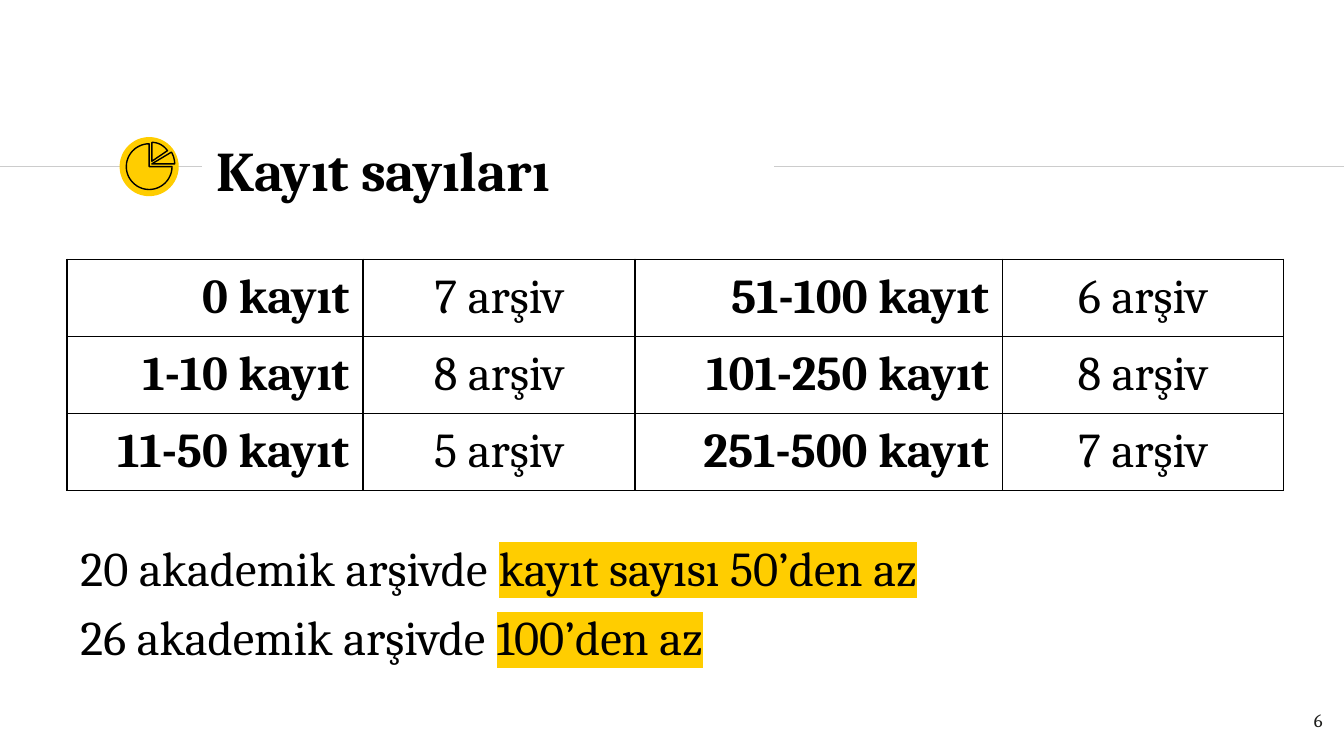
import math

import lxml.etree
import pptx
import pptx.dml.color
import pptx.enum.shapes
import pptx.enum.text
import pptx.oxml.ns
import pptx.util

Inches = pptx.util.Inches
Pt = pptx.util.Pt
qn = pptx.oxml.ns.qn
ALIGN = pptx.enum.text.PP_ALIGN
ANCHOR = pptx.enum.text.MSO_ANCHOR

THEME = {
    "font": "Cambria",
    "ink": "000000",
    "number_ink": "1D1D1B",
    "rule": "CCCCCC",
    "accent": "FFCD00",
    "title": 30,
    "body": 26,
    "number": 10,
    "thin": 0.75,
    "border": 1,
}


def rgb(color):
    return pptx.dml.color.RGBColor.from_string(color)


def apply(obj, formats):
    for name, value in formats.items():
        setattr(obj, name, value)


class Deck:
    def __init__(self, theme, slide):
        self.theme = theme
        self.slide = slide

    def run(self, p, text, size="body", color="ink", bold=False, marked=False):
        r = p.add_run()
        r.text = text
        apply(r.font, {"name": self.theme["font"], "size": Pt(self.theme[size]), "bold": bold})
        r.font.color.rgb = rgb(self.theme[color])
        if marked:
            highlight = lxml.etree.Element(qn("a:highlight"))
            lxml.etree.SubElement(highlight, qn("a:srgbClr"), val=self.theme["accent"])
            r.font._element.find(qn("a:solidFill")).addnext(highlight)

    def text(self, box, paragraphs, align=ALIGN.LEFT, anchor=ANCHOR.TOP, before=0, **style):
        sp = self.slide.shapes.add_textbox(*map(Inches, box))
        tf = sp.text_frame
        apply(tf, {"word_wrap": True, "vertical_anchor": anchor})
        for side in ("left", "right", "top", "bottom"):
            setattr(tf, f"margin_{side}", Inches(0.1))
        for i, runs in enumerate(paragraphs):
            p = tf.add_paragraph() if i else tf.paragraphs[0]
            apply(p, {"alignment": align, "space_before": Pt(before)})
            for text, marked in runs:
                self.run(p, text, marked=marked, **style)

    def line(self, x1, x2, y):
        kind = pptx.enum.shapes.MSO_CONNECTOR.STRAIGHT
        sp = self.slide.shapes.add_connector(kind, Inches(x1), Inches(y), Inches(x2), Inches(y))
        sp.line.color.rgb = rgb(self.theme["rule"])
        sp.line.width = Pt(self.theme["thin"])
        lxml.etree.SubElement(sp._element.spPr, qn("a:effectLst"))

    def disc(self, box):
        kind = pptx.enum.shapes.MSO_SHAPE.OVAL
        sp = self.slide.shapes.add_shape(kind, *map(Inches, box))
        sp.shadow.inherit = False
        sp.fill.solid()
        sp.fill.fore_color.rgb = rgb(self.theme["accent"])
        sp.line.fill.background()

    def wedge(self, x, y, radius, start, end, steps=40):
        angles = [math.radians(start + (end - start) * i / steps) for i in range(steps + 1)]
        arc = [(Inches(x + radius * math.cos(a)), Inches(y - radius * math.sin(a))) for a in angles]
        builder = self.slide.shapes.build_freeform(Inches(x), Inches(y))
        builder.add_line_segments(arc, close=True)
        sp = builder.convert_to_shape()
        sp.shadow.inherit = False
        sp.fill.background()
        sp.line.color.rgb = rgb(self.theme["ink"])
        sp.line.width = Pt(self.theme["thin"])

    def borders(self, cell):
        tcPr = cell._tc.get_or_add_tcPr()
        for side in ("lnL", "lnR", "lnT", "lnB"):
            ln = lxml.etree.SubElement(tcPr, qn(f"a:{side}"), w=str(Pt(self.theme["border"])))
            fill = lxml.etree.SubElement(ln, qn("a:solidFill"))
            lxml.etree.SubElement(fill, qn("a:srgbClr"), val=self.theme["ink"])

    def table(self, left, top, widths, row_height, rows):
        frame = self.slide.shapes.add_table(
            len(rows), len(widths), Inches(left), Inches(top),
            Inches(sum(widths)), Inches(row_height * len(rows)))
        table = frame.table
        apply(table, {"first_row": False, "horz_banding": False})
        for column, width in zip(table.columns, widths):
            column.width = Inches(width)
        for i, values in enumerate(rows):
            table.rows[i].height = Inches(row_height)
            for j, value in enumerate(values):
                cell = table.cell(i, j)
                self.borders(cell)
                cell.fill.background()
                apply(cell, {
                    "vertical_anchor": ANCHOR.MIDDLE,
                    "margin_left": Inches(0.1), "margin_right": Inches(0.1),
                    "margin_top": Inches(0.07), "margin_bottom": Inches(0.07),
                })
                p = cell.text_frame.paragraphs[0]
                p.alignment = ALIGN.CENTER if j else ALIGN.RIGHT
                self.run(p, value, bold=j == 0)


def main():
    prs = pptx.Presentation()
    apply(prs, {"slide_width": Inches(10), "slide_height": Inches(10) * 9 // 16})
    deck = Deck(THEME, prs.slides.add_slide(prs.slide_layouts[6]))

    deck.line(0, 1.5, 1.24)
    deck.disc((0.89, 1.02, 0.44, 0.44))
    deck.line(5.76, 10, 1.24)
    deck.text((1.51, 1.02, 4.24, 0.48), [[("Kayıt sayıları", False)]],
              anchor=ANCHOR.MIDDLE, size="title", bold=True)

    deck.table(0.5, 1.93, (2.2, 2.03), 0.51, [
        ("0 kayıt", "7 arşiv"),
        ("1-10 kayıt", "8 arşiv"),
        ("11-50 kayıt", "5 arşiv"),
    ])
    deck.text((9.34, 5.19, 0.6, 0.43), [[("6", False)]],
              align=ALIGN.RIGHT, size="number", color="number_ink")

    deck.wedge(1.11, 1.24, 0.17, 90, 360)
    deck.wedge(1.13, 1.2, 0.14, 34, 90)
    deck.wedge(1.13, 1.22, 0.17, 0, 31)

    deck.table(4.72, 1.93, (2.74, 2.09), 0.51, [
        ("51-100 kayıt", "6 arşiv"),
        ("101-250 kayıt", "8 arşiv"),
        ("251-500 kayıt", "7 arşiv"),
    ])
    deck.text((0.5, 3.9, 9.05, 1.22), [
        [("20 akademik arşivde ", False), ("kayıt sayısı 50’den az", True), (" ", False)],
        [("26 akademik arşivde ", False), ("100’den az", True)],
    ], before=6)

    prs.save("out.pptx")


if __name__ == "__main__":
    main()
